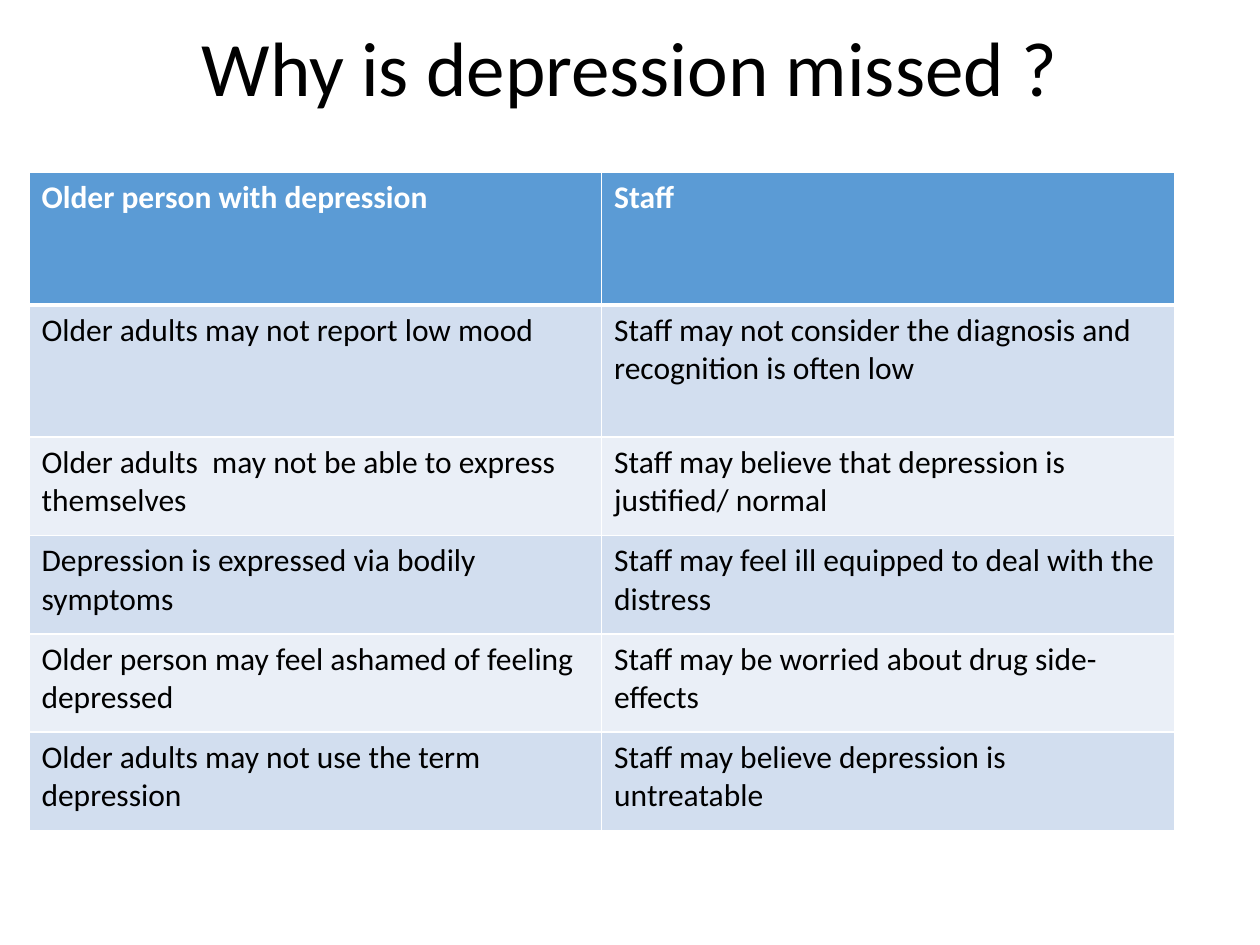
import dataclasses
import typing

import pptx
import pptx.dml.color
import pptx.enum.text
import pptx.oxml.ns
import pptx.util
from lxml import etree

Inches = pptx.util.Inches
Pt = pptx.util.Pt


@dataclasses.dataclass(frozen=True)
class Theme:
    font: str = "Calibri"
    title: int = 44
    body: int = 18
    ink: str = "000000"
    white: str = "FFFFFF"
    head: str = "5B9BD5"
    bands: tuple = ("D2DEEF", "EAEFF7")
    thin: int = 1
    thick: int = 3


class Row(typing.NamedTuple):
    person: str
    staff: str
    height: float = 0.78


THEME = Theme()
ROWS = [
    Row("Older person with depression", "Staff", 1.05),
    Row("Older adults may not report low mood",
        "Staff may not consider the diagnosis and recognition is often low", 1.05),
    Row("Older adults  may not be able to express themselves",
        "Staff may believe that depression is justified/ normal"),
    Row("Depression is expressed via bodily symptoms",
        "Staff may feel ill equipped to deal with the distress"),
    Row("Older person may feel ashamed of feeling depressed",
        "Staff may be worried about drug side-effects"),
    Row("Older adults may not use the term depression",
        "Staff may believe depression is untreatable"),
]


def style(para, size: int, color: str, bold: bool = False) -> None:
    for run in para.runs:
        run.font.name = THEME.font
        run.font.size = Pt(size)
        run.font.bold = bold
        run.font.color.rgb = pptx.dml.color.RGBColor.from_string(color)


def border(cell, side: str, width: int) -> None:
    name = pptx.oxml.ns.qn
    props = cell._tc.get_or_add_tcPr()
    line = etree.SubElement(props, name(f"a:ln{side}"), w=str(Pt(width)))
    fill = etree.SubElement(line, name("a:solidFill"))
    etree.SubElement(fill, name("a:srgbClr"), val=THEME.white)


def draw_title(slide, text: str) -> None:
    box = slide.shapes.add_textbox(Inches(0.69), Inches(0), Inches(8.62), Inches(1.13))
    frame = box.text_frame
    frame.word_wrap = True
    frame.vertical_anchor = pptx.enum.text.MSO_ANCHOR.MIDDLE
    frame.text = text
    para = frame.paragraphs[0]
    para.alignment = pptx.enum.text.PP_ALIGN.CENTER
    para.line_spacing = 0.9
    style(para, THEME.title, THEME.ink)


def draw_cell(cell, text: str, index: int) -> None:
    head = index == 0
    # Borders come before the fill in the cell properties
    widths = {
        "L": THEME.thin,
        "R": THEME.thin,
        "T": THEME.thick if index == 1 else THEME.thin,
        "B": THEME.thick if head else THEME.thin,
    }
    for side, width in widths.items():
        border(cell, side, width)
    color = THEME.head if head else THEME.bands[(index - 1) % 2]
    cell.fill.solid()
    cell.fill.fore_color.rgb = pptx.dml.color.RGBColor.from_string(color)
    cell.text_frame.text = text
    style(cell.text_frame.paragraphs[0], THEME.body,
          THEME.white if head else THEME.ink, head)


def draw_table(slide, rows: list[Row]) -> None:
    total = sum(row.height for row in rows)
    table = slide.shapes.add_table(
        len(rows), 2, Inches(0.23), Inches(1.37), Inches(9.09), Inches(total)).table
    for index, row in enumerate(rows):
        table.rows[index].height = Inches(row.height)
        for col, text in enumerate((row.person, row.staff)):
            draw_cell(table.cell(index, col), text, index)


def main() -> None:
    deck = pptx.Presentation()
    deck.slide_width, deck.slide_height = Inches(10), Inches(7.5)
    slide = deck.slides.add_slide(deck.slide_layouts[6])
    draw_title(slide, "Why is depression missed ?")
    draw_table(slide, ROWS)
    deck.save("out.pptx")


if __name__ == "__main__":
    main()
